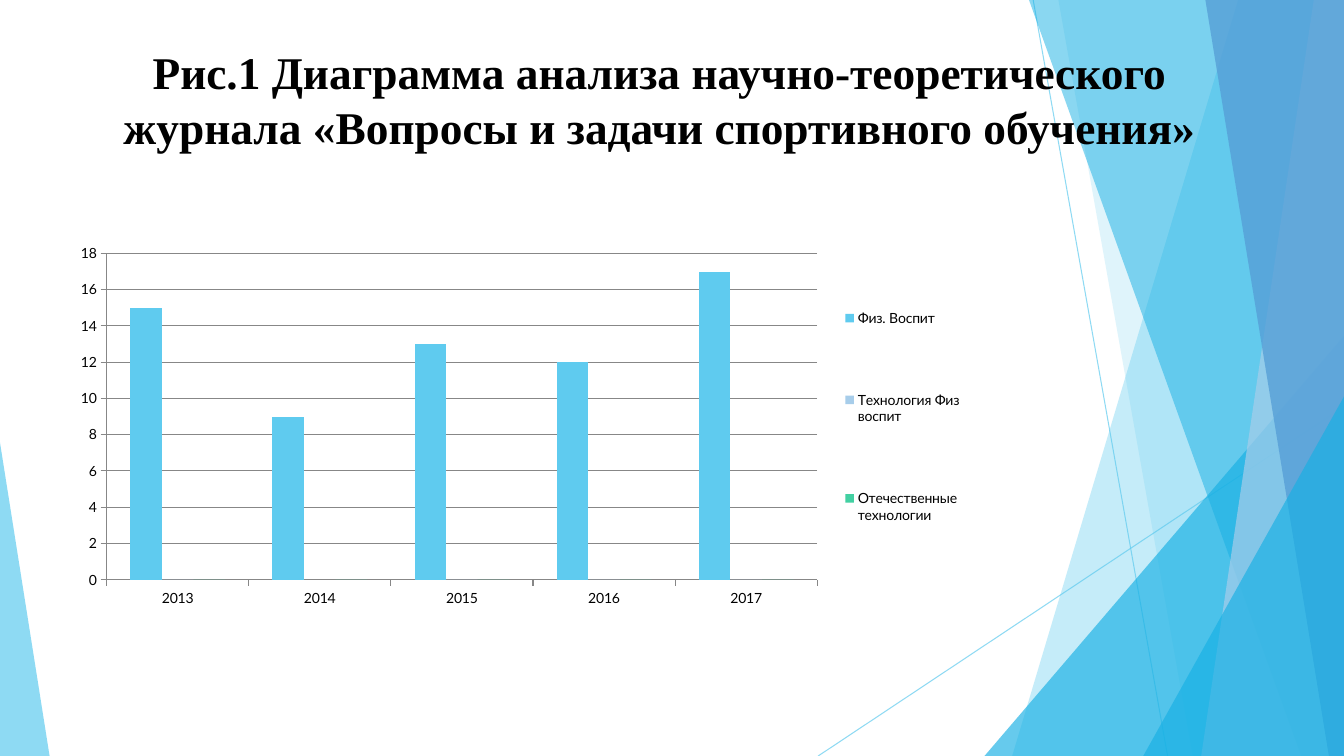
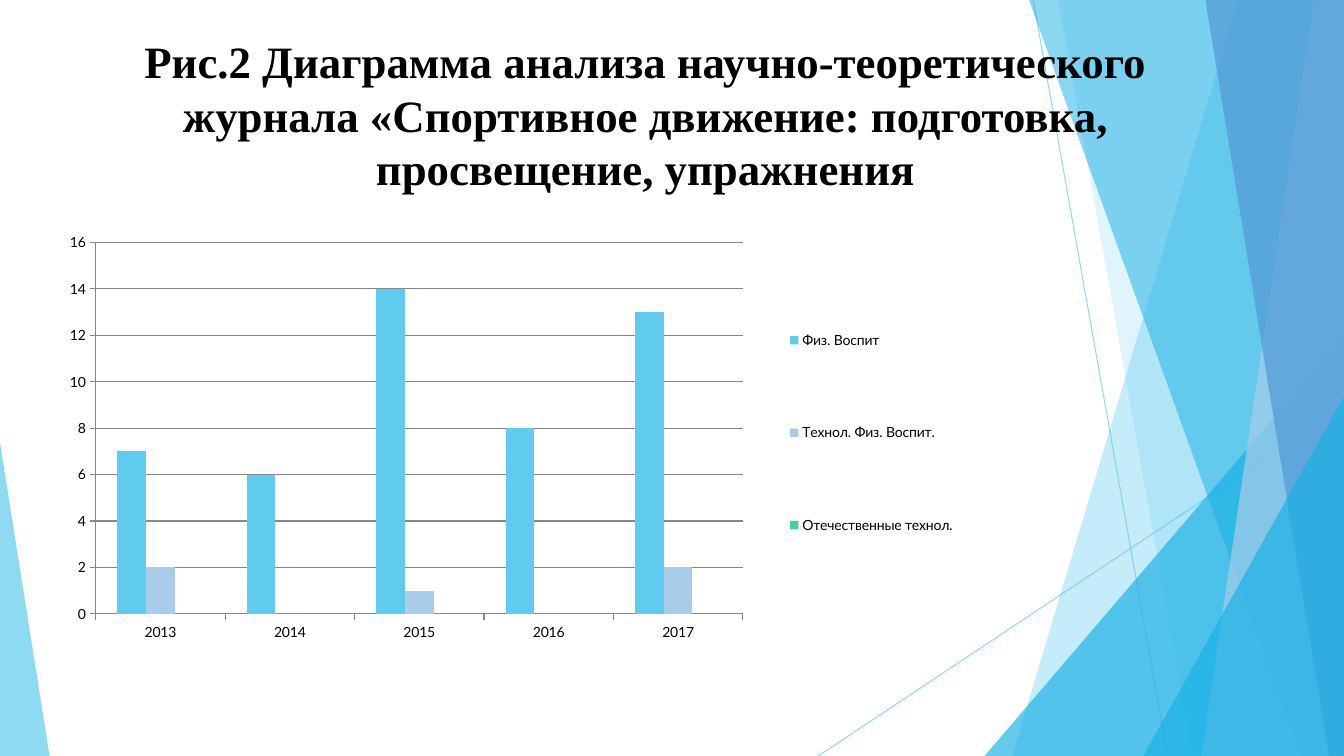
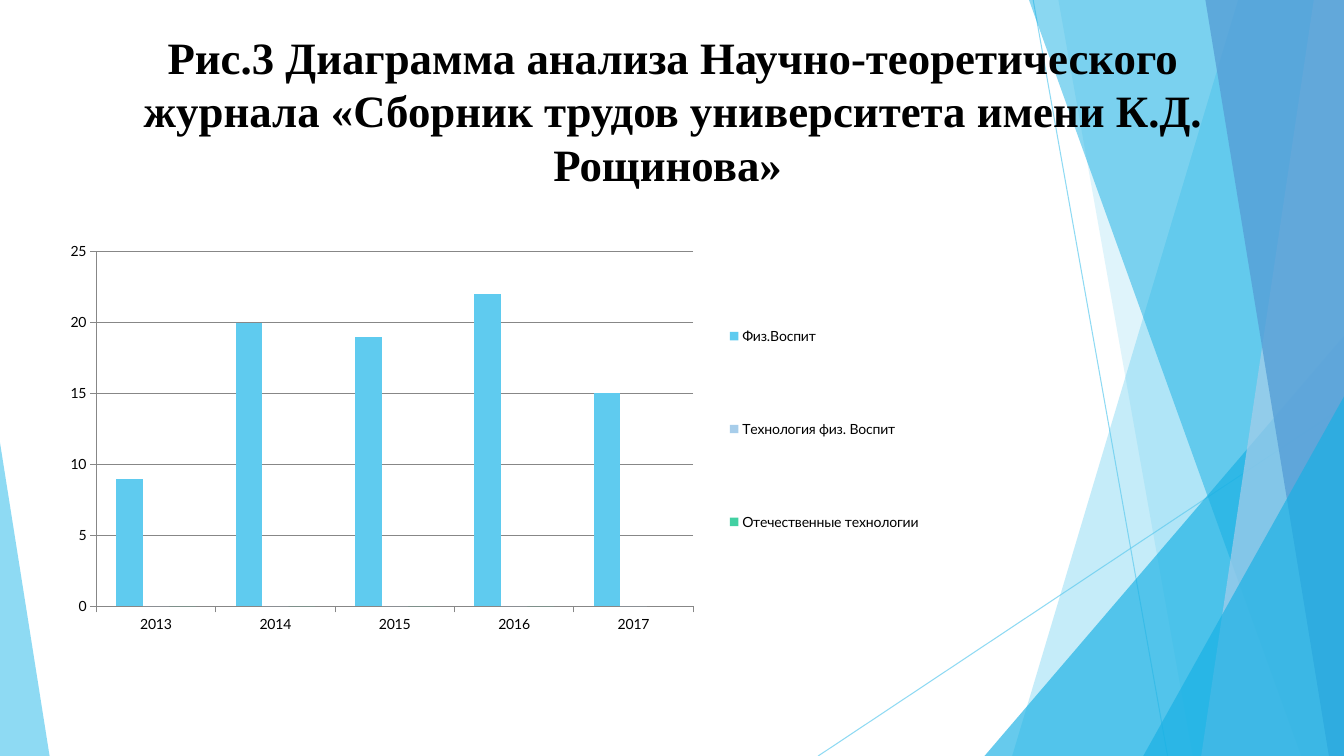
from pptx import Presentation
from pptx.chart.data import CategoryChartData
from pptx.dml.color import RGBColor
from pptx.enum.chart import XL_CHART_TYPE, XL_LEGEND_POSITION, XL_TICK_MARK
from pptx.enum.shapes import MSO_CONNECTOR, MSO_SHAPE
from pptx.enum.text import MSO_ANCHOR, PP_ALIGN
from pptx.oxml import parse_xml
from pptx.oxml.ns import nsdecls
from pptx.util import Inches, Pt

COLUMNS = XL_CHART_TYPE.COLUMN_CLUSTERED
LEGEND_RIGHT = XL_LEGEND_POSITION.RIGHT
TICK_OUTSIDE = XL_TICK_MARK.OUTSIDE
STRAIGHT = MSO_CONNECTOR.STRAIGHT
TRIANGLE = MSO_SHAPE.ISOSCELES_TRIANGLE
TOP = MSO_ANCHOR.TOP
CENTER = PP_ALIGN.CENTER

# The slide is a grid of 160 columns by 90 rows
GRID_COLS, GRID_ROWS = 160, 90
SLIDE_W, SLIDE_H = Inches(13.33), Inches(7.5)

COLORS = {
    "sky": "5FCBEF",
    "azure": "17B0E4",
    "pale": "A7CDEA",
    "steel": "569FD7",
    "green": "42D0A2",
    "grid": "878787",
    "text": "000000",
}
SERIES_COLORS = ("sky", "pale", "green")
TITLE_FONT, CHART_FONT = "Times New Roman", "Lato"
YEARS = ("2013", "2014", "2015", "2016", "2017")

# Background: rays run from point to point
RAYS = [(123, 0, 139, 90), (160, 48.4, 97.4, 90)]
# Panels reach the right edge: left end at the top, left end at the bottom
# Wedges: left, top, width, place of the tip; all stand on the bottom edge
BACKDROP = [
    ("panel", (147.4, 120.5), "sky", 36),
    ("panel", (126, 142), "sky", 20),
    ("wedge", (117.2, 40, 42.8, 1), "azure", 66),
    ("panel", (122.5, 154.9), "azure", 50),
    ("panel", (156.4, 143), "pale", 70),
    ("panel", (143.5, 158.2), "steel", 80),
    ("wedge", (136.1, 47.2, 23.9, 1), "azure", 66),
    ("wedge", (0, 52.7, 5.9, 0), "sky", 70),
]

# Boxes are left, top, width, height in grid cells;
# plot and legend are shares of the chart
JOURNALS = [
    {
        "title": "Рис.1 Диаграмма анализа научно-теоретического журнала "
                 "«Вопросы и задачи спортивного обучения»",
        "title_box": (8.8, 4.7, 139.4, 15.8),
        "title_size": 32.4,
        "chart_box": (4.8, 25, 112.8, 51.8),
        "plot": (0.07, 0.1, 0.75, 0.75),
        "legend": (0.84, 0.08, 0.14, 0.79),
        "scale": (18, 2),
        "series": {
            "Физ. Воспит": (15, 9, 13, 12, 17),
            "Технология Физ воспит": (0, None, 0, 0, 0),
            "Отечественные технологии": (0, 0, 0, 0, 0),
        },
    },
    {
        "title": "Рис.2 Диаграмма анализа научно-теоретического журнала "
                 "«Спортивное движение: подготовка, просвещение, упражнения",
        "title_box": (4.9, 3.4, 143.9, 10.1),
        "title_size": 32,
        "chart_box": (4.6, 24.5, 113.3, 54.6),
        "plot": (0.06, 0.08, 0.68, 0.81),
        "legend": (0.78, 0.11, 0.19, 0.77),
        "scale": (16, 2),
        "series": {
            "Физ. Воспит": (7, 6, 14, 8, 13),
            "Технол. Физ. Воспит.": (2, 0, 1, 0, 2),
            "Отечественные технол.": (0, 0, 0, 0, 0),
        },
    },
    {
        "title": "Рис.3 Диаграмма анализа Научно-теоретического журнала "
                 "«Сборник трудов университета имени К.Д. Рощинова» ",
        "title_box": (8.8, 2.9, 142.7, 13.9),
        "title_size": 32,
        "chart_box": (4.7, 26.9, 112.8, 50.9),
        "plot": (0.06, 0.06, 0.63, 0.83),
        "legend": (0.72, 0.06, 0.22, 0.83),
        "scale": (25, 5),
        "series": {
            "Физ.Воспит": (9, 20, 19, 22, 15),
            "Технология физ. Воспит": (0, 0, 0, 0, 0),
            "Отечественные технологии ": (0, 0, 0, 0, None),
        },
    },
]


def rgb(name):
    return RGBColor.from_string(COLORS[name])


def x(col):
    return round(SLIDE_W * col / GRID_COLS)


def y(row):
    return round(SLIDE_H * row / GRID_ROWS)


def cells(box):
    left, top, width, height = box
    return x(left), y(top), x(width), y(height)


def set_alpha(shape, percent):
    color = shape.element.xpath(".//p:spPr//a:srgbClr")[0]
    color.append(parse_xml(f'<a:alpha {nsdecls("a")} val="{percent * 1000}"/>'))


def set_layout(element, index, box, inner=False):
    """Place a chart part by shares of the chart area."""
    for old in element.xpath("./c:layout"):
        element.remove(old)
    target = '<c:layoutTarget val="inner"/>' if inner else ""
    modes = "".join(f'<c:{side}Mode val="edge"/>' for side in "xy")
    sizes = "".join(f'<c:{side} val="{share}"/>' for side, share in zip("xywh", box))
    element.insert(index, parse_xml(
        f'<c:layout {nsdecls("c")}><c:manualLayout>{target}{modes}{sizes}'
        '</c:manualLayout></c:layout>'))


class Deck:
    def __init__(self):
        self.prs = Presentation()
        self.prs.slide_width, self.prs.slide_height = SLIDE_W, SLIDE_H
        self.layout = self.prs.slide_layouts[6]
        for placeholder in list(self.layout.placeholders):
            self.layout.shapes.element.remove(placeholder.element)
        self.slide = None

    def new_slide(self):
        self.slide = self.prs.slides.add_slide(self.layout)

    def ray(self, x1, y1, x2, y2):
        ray = self.slide.shapes.add_connector(STRAIGHT, x(x1), y(y1), x(x2), y(y2))
        ray.line.color.rgb = rgb("sky")
        ray.line.width = Pt(0.75)
        set_alpha(ray, 70)
        ray.element.spPr.append(parse_xml(f'<a:effectLst {nsdecls("a")}/>'))

    def panel(self, top_left, bottom_left):
        outline = self.slide.shapes.build_freeform(x(top_left), 0)
        outline.add_line_segments([
            (SLIDE_W, 0), (SLIDE_W, SLIDE_H), (x(bottom_left), SLIDE_H)])
        return outline.convert_to_shape()

    def wedge(self, left, top, width, tip):
        wedge = self.slide.shapes.add_shape(
            TRIANGLE, *cells((left, top, width, GRID_ROWS - top)))
        wedge.adjustments[0] = tip
        return wedge

    def backdrop(self):
        """Draw the background, then move it to the layout all slides share."""
        for ray in RAYS:
            self.ray(*ray)
        for kind, place, color, alpha in BACKDROP:
            part = self.panel(*place) if kind == "panel" else self.wedge(*place)
            part.shadow.inherit = False
            part.fill.solid()
            part.fill.fore_color.rgb = rgb(color)
            part.line.fill.background()
            set_alpha(part, alpha)
        for part in list(self.slide.shapes):
            self.layout.shapes.element.append(part.element)

    def title(self, text, box, size):
        frame = self.slide.shapes.add_textbox(*cells(box)).text_frame
        frame.word_wrap = True
        frame.vertical_anchor = TOP
        frame.margin_top = Inches(0.05)
        frame.text = text
        paragraph = frame.paragraphs[0]
        paragraph.alignment = CENTER
        paragraph.line_spacing = Pt(size * 1.2)
        font = paragraph.runs[0].font
        font.name, font.size, font.bold = TITLE_FONT, Pt(size), True
        font.color.rgb = rgb("text")

    def column_chart(self, series, box, plot, legend, scale):
        data = CategoryChartData()
        data.categories = YEARS
        for name, values in series.items():
            data.add_series(name, values)
        chart = self.slide.shapes.add_chart(COLUMNS, *cells(box), data).chart
        chart.has_title = False
        chart.font.name, chart.font.size = CHART_FONT, Pt(10)
        chart.font.color.rgb = rgb("text")

        # Columns
        columns = chart.plots[0]
        columns.vary_by_categories = False
        columns.gap_width, columns.overlap = 150, 0
        for group, color in zip(columns.series, SERIES_COLORS):
            group.format.fill.solid()
            group.format.fill.fore_color.rgb = rgb(color)

        # Axes and grid
        values_axis = chart.value_axis
        values_axis.minimum_scale = 0
        values_axis.maximum_scale, values_axis.major_unit = scale
        values_axis.has_major_gridlines = True
        for axis in (chart.category_axis, values_axis):
            axis.major_tick_mark = TICK_OUTSIDE
        for part in (chart.category_axis, values_axis, values_axis.major_gridlines):
            part.format.line.color.rgb = rgb("grid")
            part.format.line.width = Pt(0.75)

        # Legend and plot places
        chart.has_legend = True
        chart.legend.position = LEGEND_RIGHT
        chart.legend.include_in_layout = False
        set_layout(chart.element.xpath(".//c:plotArea")[0], 0, plot, inner=True)
        set_layout(chart.element.xpath(".//c:legend")[0], 1, legend)


def main():
    deck = Deck()
    for number, journal in enumerate(JOURNALS):
        deck.new_slide()
        if number == 0:
            deck.backdrop()
        deck.title(journal["title"], journal["title_box"], journal["title_size"])
        deck.column_chart(journal["series"], journal["chart_box"], journal["plot"],
                          journal["legend"], journal["scale"])
    deck.prs.save("out.pptx")


if __name__ == "__main__":
    main()
